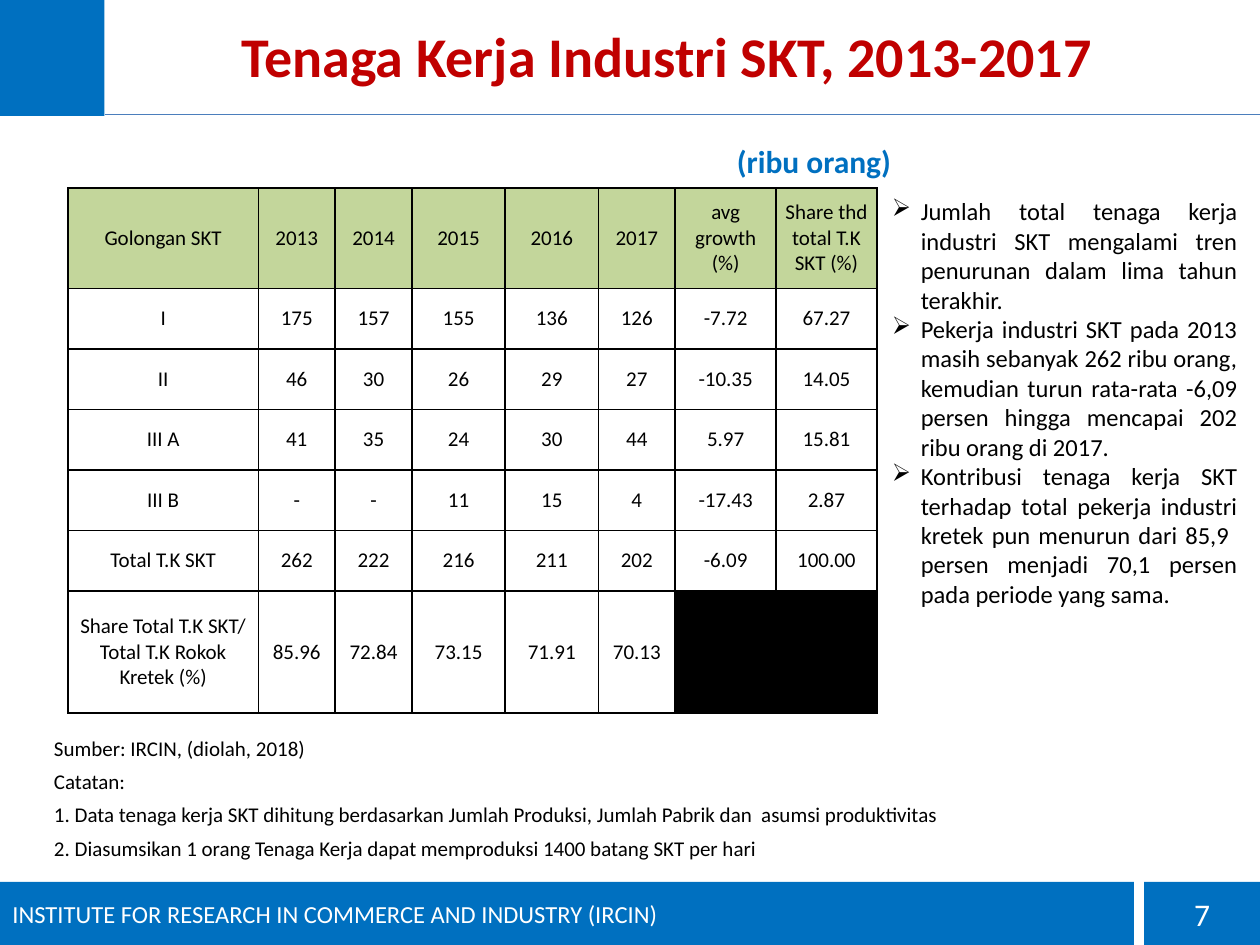
import dataclasses

import pptx
import pptx.dml.color
import pptx.enum.shapes
import pptx.enum.text
import pptx.oxml.ns
import pptx.util
from lxml import etree

Inches = pptx.util.Inches
Pt = pptx.util.Pt
ALIGN = pptx.enum.text.PP_ALIGN
MIDDLE = pptx.enum.text.MSO_ANCHOR.MIDDLE


@dataclasses.dataclass(frozen=True)
class Theme:
    font: str = "Calibri"
    blue: str = "0070C0"
    red: str = "C00000"
    green: str = "C3D69B"
    rule: str = "4B7EBC"
    black: str = "000000"
    white: str = "FFFFFF"
    title: int = 32
    head: int = 18
    body: int = 14
    small: int = 12


THEME = Theme()

COLS = [1.51, 0.61, 0.61, 0.74, 0.74, 0.61, 0.8, 0.8]
ROWS = [0.8] + [0.48] * 5 + [0.97]
DATA = [
    ["Golongan SKT", "2013", "2014", "2015", "2016", "2017",
     "avg growth (%)", "Share thd total T.K SKT (%)"],
    ["I", "175", "157", "155", "136", "126", "-7.72", "67.27"],
    ["II", "46", "30", "26", "29", "27", "-10.35", "14.05"],
    ["III A", "41", "35", "24", "30", "44", "5.97", "15.81"],
    ["III B", "-", "-", "11", "15", "4", "-17.43", "2.87"],
    ["Total T.K SKT", "262", "222", "216", "211", "202", "-6.09", "100.00"],
    ["Share Total T.K SKT/ Total T.K Rokok Kretek (%)",
     "85.96", "72.84", "73.15", "71.91", "70.13", "", ""],
]
POINTS = [
    "Jumlah total tenaga kerja industri SKT mengalami tren penurunan dalam "
    "lima tahun terakhir.",
    "Pekerja industri SKT pada 2013 masih sebanyak 262 ribu orang, kemudian "
    "turun rata-rata -6,09 persen hingga mencapai 202 ribu orang di 2017.",
    "Kontribusi tenaga kerja SKT terhadap total pekerja industri kretek pun "
    "menurun dari 85,9  persen menjadi 70,1 persen pada periode yang sama.",
]
NOTES = [
    "Sumber: IRCIN, (diolah, 2018)",
    "Catatan:",
    "1. Data tenaga kerja SKT dihitung berdasarkan Jumlah Produksi, "
    "Jumlah Pabrik dan  asumsi produktivitas",
    "2. Diasumsikan 1 orang Tenaga Kerja dapat memproduksi 1400 batang SKT "
    "per hari",
]


def color(code):
    return pptx.dml.color.RGBColor.from_string(code)


def paint(item, code):
    item.fill.solid()
    item.fill.fore_color.rgb = color(code)


def write(frame, lines, size, code, align=ALIGN.LEFT, bold=False, after=0):
    frame.text = "\n".join(lines)
    for para in frame.paragraphs:
        para.alignment = align
        para.space_after = Pt(after)
        for run in para.runs:
            font = run.font
            font.name, font.size, font.bold = THEME.font, Pt(size), bold
            font.color.rgb = color(code)


def add_text(slide, box, lines, size, code, wrap=True, **style):
    frame = slide.shapes.add_textbox(*map(Inches, box)).text_frame
    frame.word_wrap = wrap
    write(frame, lines, size, code, **style)
    return frame


def add_bar(slide, box, text="", size=THEME.body, align=ALIGN.LEFT):
    kind = pptx.enum.shapes.MSO_SHAPE.RECTANGLE
    bar = slide.shapes.add_shape(kind, *map(Inches, box))
    bar.shadow.inherit = False
    paint(bar, THEME.blue)
    bar.line.fill.background()
    if text:
        bar.text_frame.vertical_anchor = MIDDLE
        write(bar.text_frame, [text], size, THEME.white, align)


def add_rule(slide, left, right, top):
    kind = pptx.enum.shapes.MSO_CONNECTOR.STRAIGHT
    ends = map(Inches, (left, top, right, top))
    rule = slide.shapes.add_connector(kind, *ends)
    rule.line.color.rgb = color(THEME.rule)
    rule.line.width = Pt(0.75)
    props = rule._element.spPr
    etree.SubElement(props, pptx.oxml.ns.qn("a:effectLst"))


def add_bullets(frame, indent):
    for para in frame.paragraphs:
        props = para._p.get_or_add_pPr()
        props.set("marL", str(Inches(indent)))
        props.set("indent", str(-Inches(indent)))
        mark = etree.SubElement(props, pptx.oxml.ns.qn("a:buChar"))
        mark.set("char", "➢")


def frame_cell(cell):
    """Draw a thin black border on all four sides."""
    qn = pptx.oxml.ns.qn
    props = cell._tc.get_or_add_tcPr()
    for side in "LRTB":
        edge = etree.SubElement(props, qn("a:ln" + side), w=str(Pt(1)))
        fill = etree.SubElement(edge, qn("a:solidFill"))
        etree.SubElement(fill, qn("a:srgbClr"), val=THEME.black)


def fill_cell(cell, text, code):
    cell.margin_left = cell.margin_right = Inches(0.06)
    cell.margin_top = cell.margin_bottom = 0
    cell.vertical_anchor = MIDDLE
    frame_cell(cell)
    paint(cell, code)
    write(cell.text_frame, [text], THEME.small, THEME.black,
          ALIGN.CENTER, after=6)


def add_grid(slide, left, top):
    box = map(Inches, (left, top, sum(COLS), sum(ROWS)))
    grid = slide.shapes.add_table(len(ROWS), len(COLS), *box).table
    for col, width in zip(grid.columns, COLS):
        col.width = Inches(width)
    for row, height in zip(grid.rows, ROWS):
        row.height = Inches(height)
    for r, line in enumerate(DATA):
        for c, text in enumerate(line):
            code = THEME.green if r == 0 else THEME.white
            fill_cell(grid.cell(r, c), text, code if text else THEME.black)
    last = len(ROWS) - 1
    grid.cell(last, 6).merge(grid.cell(last, 7))


def main():
    deck = pptx.Presentation()
    deck.slide_width, deck.slide_height = Inches(10), Inches(7.5)
    slide = deck.slides.add_slide(deck.slide_layouts[6])

    title = add_text(slide, (0.92, 0.09, 8.75, 0.69),
                     ["Tenaga Kerja Industri SKT, 2013-2017"],
                     THEME.title, THEME.red, align=ALIGN.CENTER, bold=True)
    title.vertical_anchor = MIDDLE
    add_grid(slide, 0.54, 1.49)
    add_text(slide, (0.33, 5.79, 9.08, 1.12), NOTES, THEME.small,
             THEME.black, align=ALIGN.JUSTIFY, after=4.5)
    points = add_text(slide, (6.98, 1.51, 2.94, 3.4), POINTS, THEME.body,
                      THEME.black, align=ALIGN.JUSTIFY)
    add_bullets(points, 0.23)

    add_bar(slide, (0, 0, 0.83, 0.92))
    add_rule(slide, 0.83, 10, 0.91)
    add_bar(slide, (0, 7, 9, 0.5),
            "INSTITUTE FOR RESEARCH IN COMMERCE AND INDUSTRY (IRCIN)")
    add_bar(slide, (9.08, 7, 0.92, 0.5), "7", THEME.head, ALIGN.CENTER)
    add_text(slide, (5.75, 1.08, 1.44, 0.4), ["(ribu orang)"], THEME.head,
             THEME.blue, wrap=False, bold=True)
    deck.save("out.pptx")


if __name__ == "__main__":
    main()
